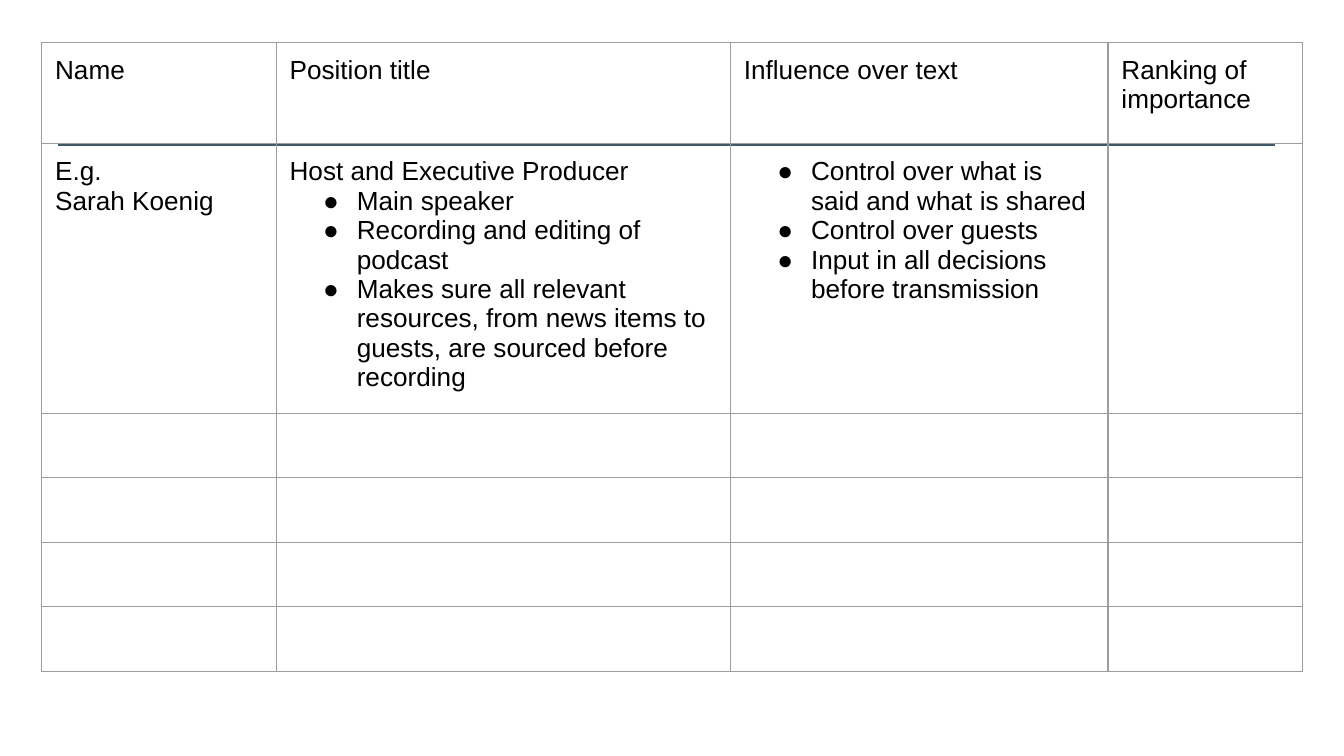
from dataclasses import dataclass

from lxml.etree import SubElement
from pptx import Presentation
from pptx.dml.color import RGBColor
from pptx.enum.shapes import MSO_CONNECTOR
from pptx.oxml.ns import qn
from pptx.slide import Slide
from pptx.table import _Cell
from pptx.util import Emu, Pt

EMU_PER_PX = 4572  # 200 px to the inch
SLIDE_WIDTH, SLIDE_HEIGHT = 2000, 1125


@dataclass(frozen=True)
class Theme:
    font: str = "Arial"
    text_size: int = 14
    text: str = "000000"
    border: str = "9E9E9E"
    border_width: float = 0.75
    rule: str = "425968"
    rule_width: float = 1
    background: str = "FFFFFF"


@dataclass(frozen=True)
class Line:
    text: str
    bullet: bool = False


THEME = Theme()
COLUMN_WIDTHS = [349, 676, 562, 289]
ROW_HEIGHTS = [151, 401] + [96] * 4
CELL_MARGIN = 20
BULLET_INDENT, BULLET_HANGING = 100, 50

HEADINGS = [
    [Line("Name")],
    [Line("Position title")],
    [Line("Influence over text")],
    [Line("Ranking of importance")],
]
EXAMPLE = [
    [Line("E.g."), Line("Sarah Koenig")],
    [
        Line("Host and Executive Producer"),
        Line("Main speaker", bullet=True),
        Line("Recording and editing of podcast", bullet=True),
        Line(
            "Makes sure all relevant resources, from news items to guests, "
            "are sourced before recording",
            bullet=True,
        ),
    ],
    [
        Line("Control over what is said and what is shared", bullet=True),
        Line("Control over guests", bullet=True),
        Line("Input in all decisions before transmission", bullet=True),
    ],
    [],
]
ROWS = [HEADINGS, EXAMPLE] + [[[]] * len(COLUMN_WIDTHS)] * 4


def px(length: int) -> Emu:
    return Emu(length * EMU_PER_PX)


def draw_rule(slide: Slide, left: int, right: int, top: int) -> None:
    connector = slide.shapes.add_connector(
        MSO_CONNECTOR.STRAIGHT, px(left), px(top), px(right), px(top)
    )
    connector.line.color.rgb = RGBColor.from_string(THEME.rule)
    connector.line.width = Pt(THEME.rule_width)
    SubElement(connector._element.spPr, qn("a:effectLst"))


def format_cell(cell: _Cell) -> None:
    cell.margin_left = cell.margin_right = px(CELL_MARGIN)
    cell.margin_top = cell.margin_bottom = px(CELL_MARGIN)
    properties = cell._tc.get_or_add_tcPr()
    for side in ("a:lnL", "a:lnR", "a:lnT", "a:lnB"):
        border = SubElement(properties, qn(side), w=str(Pt(THEME.border_width)))
        fill = SubElement(border, qn("a:solidFill"))
        SubElement(fill, qn("a:srgbClr"), val=THEME.border)
    cell.fill.background()


def write_cell(cell: _Cell, lines: list[Line]) -> None:
    text_size = str(THEME.text_size * 100)
    cell.text_frame.text = "\n".join(line.text for line in lines)
    for paragraph, line in zip(cell.text_frame.paragraphs, lines):
        for run in paragraph.runs:
            run.font.name = THEME.font
            run.font.size = Pt(THEME.text_size)
            run.font.color.rgb = RGBColor.from_string(THEME.text)
        if line.bullet:
            properties = paragraph._p.get_or_add_pPr()
            properties.set("marL", str(px(BULLET_INDENT)))
            properties.set("indent", str(px(-BULLET_HANGING)))
            SubElement(properties, qn("a:buSzPts"), val=text_size)
            SubElement(properties, qn("a:buFont"), typeface=THEME.font)
            SubElement(properties, qn("a:buChar"), char="●")
    if not lines:
        # Keeps empty rows from growing to the default text size
        paragraph = cell.text_frame.paragraphs[0]
        SubElement(paragraph._p, qn("a:endParaRPr"), sz=text_size)


def draw_table(slide: Slide, left: int, top: int) -> None:
    table = slide.shapes.add_table(
        len(ROW_HEIGHTS), len(COLUMN_WIDTHS), px(left), px(top),
        px(sum(COLUMN_WIDTHS)), px(sum(ROW_HEIGHTS)),
    ).table
    table.first_row = False
    table.horz_banding = False
    for column, width in zip(table.columns, COLUMN_WIDTHS):
        column.width = px(width)
    for row, height, contents in zip(table.rows, ROW_HEIGHTS, ROWS):
        row.height = px(height)
        for cell, lines in zip(row.cells, contents):
            format_cell(cell)
            write_cell(cell, lines)


def main() -> None:
    presentation = Presentation()
    presentation.slide_width = px(SLIDE_WIDTH)
    presentation.slide_height = px(SLIDE_HEIGHT)
    slide = presentation.slides.add_slide(presentation.slide_layouts[6])
    slide.background.fill.solid()
    slide.background.fill.fore_color.rgb = RGBColor.from_string(THEME.background)

    # Rule behind the table, under its headings
    draw_rule(slide, left=86, right=1898, top=216)

    # Roles and their influence
    draw_table(slide, left=62, top=63)

    presentation.save("out.pptx")


if __name__ == "__main__":
    main()
